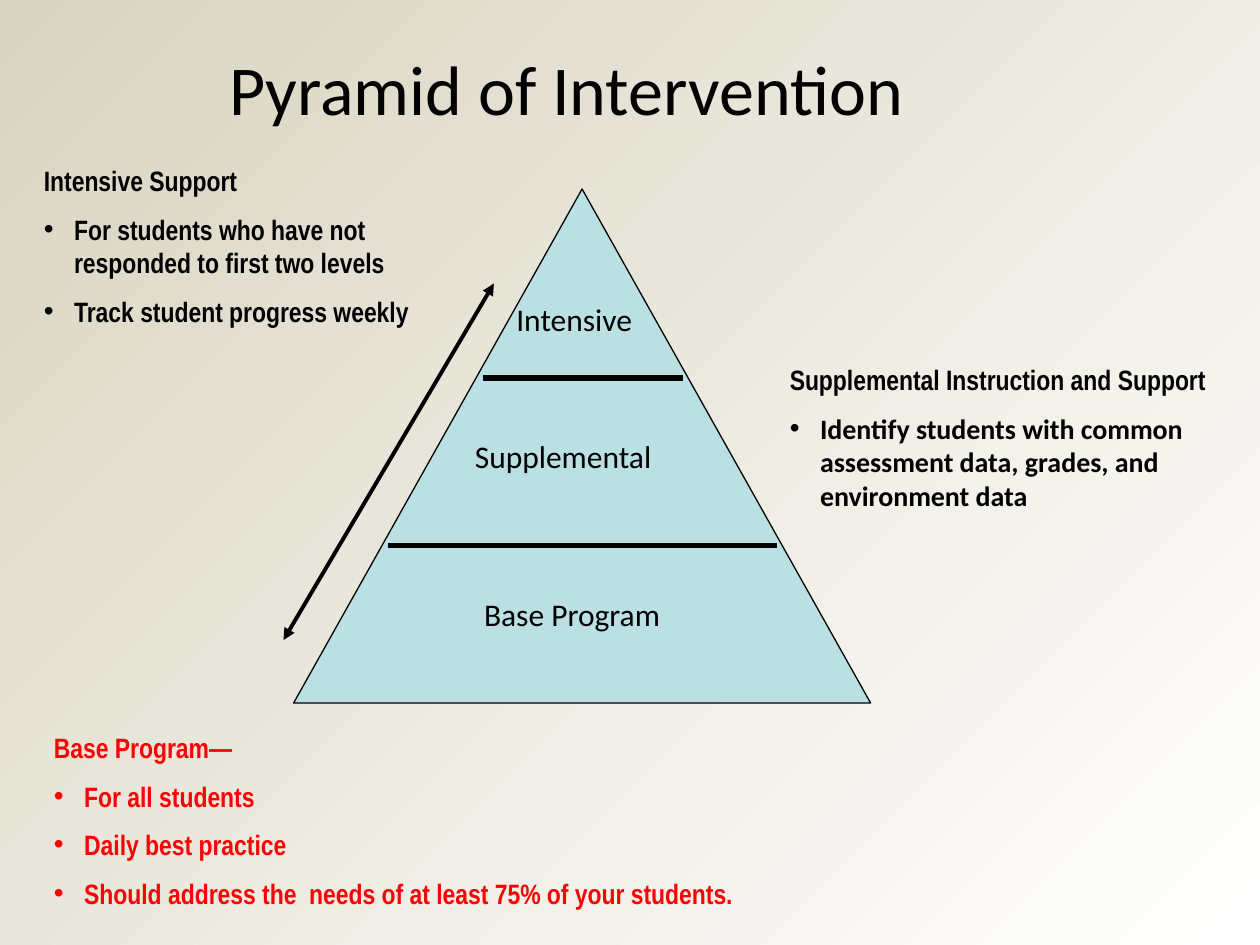
from dataclasses import dataclass

import pptx
import pptx.dml.color
import pptx.enum.shapes
import pptx.enum.text
import pptx.oxml
import pptx.oxml.ns
import pptx.util
from pptx.util import Inches

BLACK, RED = "000000", "FF0000"
ALIGN = pptx.enum.text.PP_ALIGN


@dataclass
class Label:
    text: str
    box: tuple
    align: ALIGN = ALIGN.LEFT


@dataclass
class Note:
    heading: str
    bullets: list
    box: tuple
    color: str = BLACK
    bullet_font: str = "Arial Narrow"


@dataclass
class Line:
    start: tuple
    end: tuple
    width: float = 3
    arrows: bool = False


LINES = [
    Line((3.83, 3), (5.42, 3)),
    Line((3.08, 4.33), (6.17, 4.33)),
    Line((2.25, 5.08), (3.92, 2.25), 2.25, True),
]
LABELS = [
    Label("Base Program", (3.25, 4.67, 2.58, 0.4), ALIGN.CENTER),
    Label("Supplemental", (3.67, 3.42, 1.92, 0.4)),
    Label("Intensive", (4, 2.33, 1.33, 0.4)),
]
NOTES = [
    Note("Supplemental Instruction and Support",
         ["Identify students with common assessment data, grades, and environment data"],
         (6.17, 2.83, 3.67, 2.11), bullet_font="Calibri"),
    Note("Base Program—",
         ["For all students", "Daily best practice",
          "Should address the  needs of at least 75% of your students."],
         (0.33, 5.75, 7.67, 2.32), RED),
    Note("Intensive Support",
         ["For students who have not responded to first two levels",
          "Track student progress weekly"],
         (0.25, 1.25, 3.17, 1.44)),
]


def rgb(value: str):
    return pptx.dml.color.RGBColor.from_string(value)


def inches(values: tuple) -> list:
    return [Inches(v) for v in values]


def add_xml(parent, tag: str, **attrs: str) -> None:
    el = pptx.oxml.parse_xml(f"<a:{tag} {pptx.oxml.ns.nsdecls('a')}/>")
    for name, value in attrs.items():
        el.set(name, value)
    parent.append(el)


def write(p, text: str, color: str = BLACK, **font) -> None:
    """Add a run to a paragraph, with font attributes given by name."""
    r = p.add_run()
    r.text = text
    r.font.color.rgb = rgb(color)
    for name, value in font.items():
        setattr(r.font, name, value)


def add_text_box(slide, box: tuple):
    tf = slide.shapes.add_textbox(*inches(box)).text_frame
    tf.word_wrap = True
    tf.auto_size = pptx.enum.text.MSO_AUTO_SIZE.SHAPE_TO_FIT_TEXT
    return tf


def draw_background(slide) -> None:
    fill = slide.background.fill
    fill.gradient()
    fill.gradient_angle = 315
    for stop, position, color in zip(fill.gradient_stops, (0, 1), ("D9D4C1", "FFFFFF")):
        stop.position = position
        stop.color.rgb = rgb(color)


def draw_title(slide, text: str) -> None:
    sp = slide.shapes.title
    sp.left, sp.top, sp.width, sp.height = inches((1.72, 0.33, 6.94, 0.75))
    tf = sp.text_frame
    tf.vertical_anchor = pptx.enum.text.MSO_ANCHOR.BOTTOM
    p = tf.paragraphs[0]
    p.alignment = ALIGN.LEFT
    write(p, text, size=pptx.util.Pt(40), name="Calibri")


def draw_pyramid(slide) -> None:
    sp = slide.shapes.add_shape(pptx.enum.shapes.MSO_SHAPE.ISOSCELES_TRIANGLE,
                                *inches((2.33, 1.5, 4.58, 4.08)))
    sp.shadow.inherit = False
    sp.fill.solid()
    sp.fill.fore_color.rgb = rgb("BBE0E3")
    sp.line.color.rgb = rgb(BLACK)
    sp.line.width = pptx.util.Pt(0.75)


def draw_line(slide, line: Line) -> None:
    cxn = slide.shapes.add_connector(pptx.enum.shapes.MSO_CONNECTOR.STRAIGHT,
                                     *inches(line.start + line.end))
    cxn.line.color.rgb = rgb(BLACK)
    cxn.line.width = pptx.util.Pt(line.width)
    if line.arrows:
        for end in ("headEnd", "tailEnd"):
            add_xml(cxn.line._get_or_add_ln(), end, type="triangle")
    add_xml(cxn._element.spPr, "effectLst")


def draw_label(slide, label: Label) -> None:
    p = add_text_box(slide, label.box).paragraphs[0]
    p.alignment = label.align
    write(p, label.text, size=pptx.util.Pt(18), name="Calibri")


def draw_note(slide, note: Note) -> None:
    tf = add_text_box(slide, note.box)
    font = {"size": pptx.util.Pt(16), "bold": True}
    write(tf.paragraphs[0], note.heading, note.color, name="Arial Narrow", **font)
    for text in note.bullets:
        p = tf.add_paragraph()
        p.space_before = pptx.util.Pt(8.5)
        pPr = p._p.get_or_add_pPr()
        indent = Inches(0.24)
        pPr.set("marL", str(indent))
        pPr.set("indent", str(-indent))
        add_xml(pPr, "buFont", typeface="Arial")
        add_xml(pPr, "buChar", char="•")
        write(p, text, note.color, name=note.bullet_font, **font)


def main() -> None:
    prs = pptx.Presentation()
    prs.slide_width, prs.slide_height = inches((10, 7.5))
    slide = prs.slides.add_slide(prs.slide_layouts.get_by_name("Title Only"))
    draw_background(slide)
    draw_title(slide, "Pyramid of Intervention")
    draw_pyramid(slide)
    for line in LINES:
        draw_line(slide, line)
    for label in LABELS:
        draw_label(slide, label)
    for note in NOTES:
        draw_note(slide, note)
    prs.save("out.pptx")


if __name__ == "__main__":
    main()
